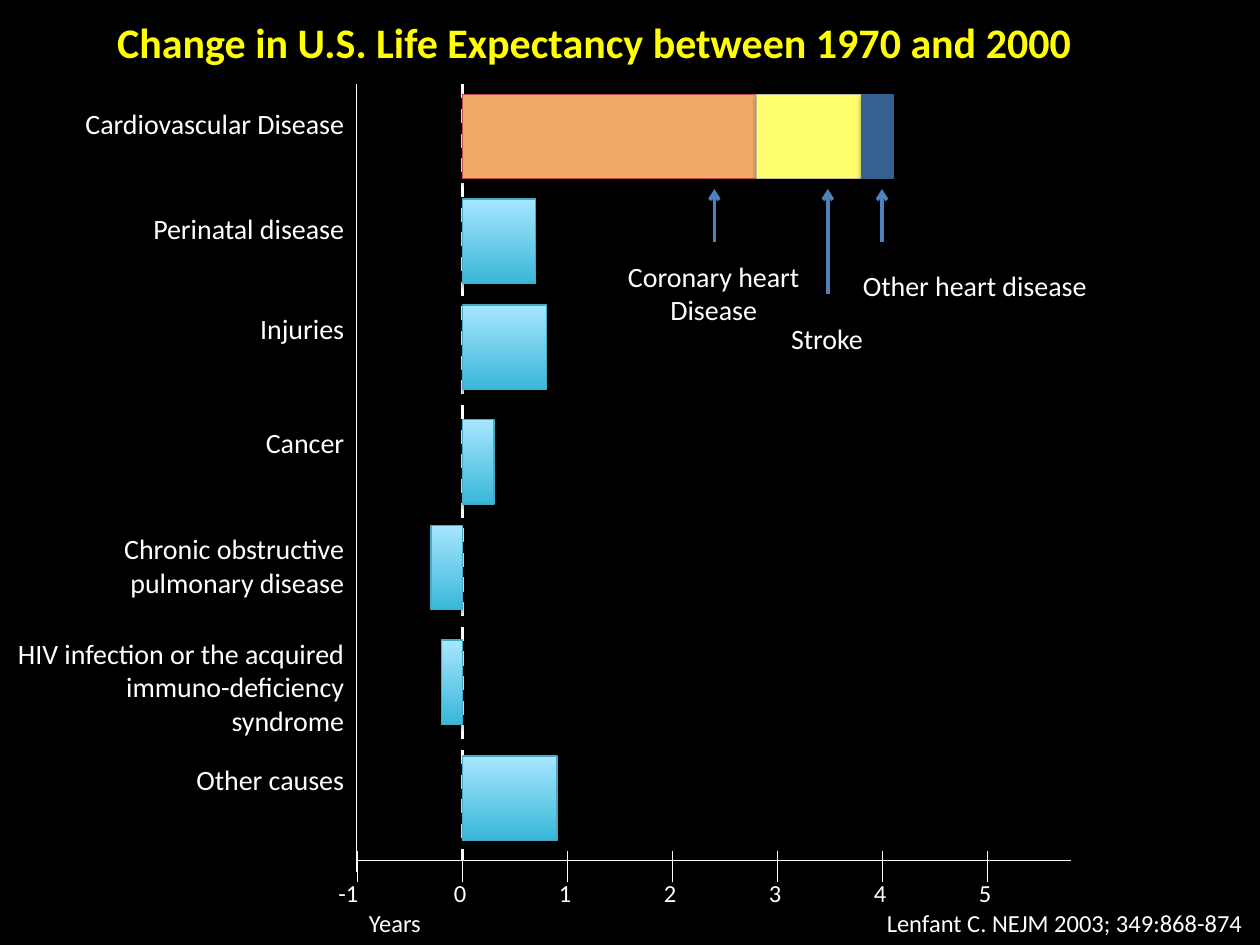
from lxml.etree import SubElement
from pptx import Presentation
from pptx.dml.color import RGBColor
from pptx.enum.dml import MSO_LINE
from pptx.enum.shapes import MSO_CONNECTOR, MSO_SHAPE
from pptx.enum.text import MSO_ANCHOR, MSO_AUTO_SIZE, PP_ALIGN as Align
from pptx.oxml.ns import qn
from pptx.util import Inches, Pt

COLORS = {
    "background": "000000", "text": "FFFFFF", "title": "FFFF00", "arrow": "4F81BD",
    "bar_bottom": "39B7D8", "bar_top": "A7E6FF", "bar_line": "46AAC5",
    "coronary": "F1A967", "coronary_line": "BF4C48",
    "stroke": "FFFF6E", "stroke_line": "C4BD97", "other_heart": "376092",
}
TITLE = "Change in U.S. Life Expectancy between 1970 and 2000"
SOURCE = "Lenfant C. NEJM 2003; 349:868-874"

# cause, bar top, label top, label width, label height,
# segments of (years, fill, line); a fill of None is the gradient
CAUSES = [
    ("Cardiovascular Disease", 0.75, 0.8, 2.67, 0.37,
     [(2.8, "coronary", "coronary_line"), (1, "stroke", "stroke_line"),
      (0.3, "other_heart", "other_heart")]),
    ("Perinatal disease", 1.58, 1.63, 2.75, 0.37, [(0.7, None, "bar_line")]),
    ("Injuries", 2.42, 2.42, 2.67, 0.37, [(0.8, None, "bar_line")]),
    ("Cancer", 3.33, 3.33, 2.75, 0.37, [(0.3, None, "bar_line")]),
    ("Chronic obstructive pulmonary disease", 4.17, 4.17, 2.75, 0.64,
     [(-0.3, None, "bar_line")]),
    ("HIV infection or the acquired immuno-deficiency syndrome", 5.08, 5, 2.83, 0.91,
     [(-0.2, None, "bar_line")]),
    ("Other causes", 6, 6, 2.67, 0.37, [(0.9, None, "bar_line")]),
]
# text, label box, alignment, arrow x, arrow start y
CALLOUTS = [
    ("Coronary heart\nDisease", (4.53, 2.01, 2.27, 0.64), Align.CENTER, 5.67, 1.92),
    ("Stroke", (6.18, 2.5, 0.95, 0.37), Align.LEFT, 6.57, 2.33),
    ("Other heart disease", (6.75, 2.08, 2.27, 0.37), Align.LEFT, 7, 1.92),
]
TICKS = range(-1, 6)
ZERO_X, YEAR_WIDTH = 3.67, 5 / 6
BAR_HEIGHT = 0.67
AXIS_LEFT, AXIS_RIGHT, AXIS_TOP, AXIS_Y = 2.83, 8.5, 0.67, 6.83
ARROW_TIP = 1.5


def color(name):
    return RGBColor.from_string(COLORS[name])


def year_x(years):
    return ZERO_X + years * YEAR_WIDTH


def set_effects(shape, shadow=None):
    """Replace the theme shadow; shadow is (opacity percent, distance in points)."""
    effects = SubElement(shape._element.spPr, qn("a:effectLst"))
    if shadow:
        opacity, distance = shadow
        outer = SubElement(effects, qn("a:outerShdw"), blurRad=str(Pt(3.1)),
                           dist=str(Pt(distance)), dir="5400000", rotWithShape="0")
        black = SubElement(outer, qn("a:srgbClr"), val=COLORS["background"])
        SubElement(black, qn("a:alpha"), val=str(opacity * 1000))


def write_text(shape, text, size=16, tint="text", bold=False, align=Align.LEFT, wrap=True):
    frame = shape.text_frame
    frame.word_wrap = wrap
    frame.vertical_anchor = MSO_ANCHOR.TOP
    frame.auto_size = MSO_AUTO_SIZE.SHAPE_TO_FIT_TEXT
    frame.text = text
    for para in frame.paragraphs:
        para.alignment = align
        for span in para.runs:
            span.font.name = "Calibri"
            span.font.size = Pt(size)
            span.font.bold = bold
            span.font.color.rgb = color(tint)


def add_label(page, text, place, **style):
    box = page.shapes.add_textbox(*map(Inches, place))
    write_text(box, text, **style)


def add_line(page, start, end, tint="text", width=0.75, dashed=False, arrow=False, shadow=None):
    line = page.shapes.add_connector(MSO_CONNECTOR.STRAIGHT, *map(Inches, start + end))
    line.line.color.rgb = color(tint)
    line.line.width = Pt(width)
    if dashed:
        line.line.dash_style = MSO_LINE.DASH
    if arrow:
        SubElement(line.line._get_or_add_ln(), qn("a:tailEnd"), type="arrow")
    set_effects(line, shadow)


def add_bar(page, start, end, top, fill, outline):
    left, right = sorted((year_x(start), year_x(end)))
    bar = page.shapes.add_shape(MSO_SHAPE.RECTANGLE, Inches(left), Inches(top),
                                Inches(right - left), Inches(BAR_HEIGHT))
    if fill:
        bar.fill.solid()
        bar.fill.fore_color.rgb = color(fill)
    else:
        bar.fill.gradient()
        bar.fill.gradient_angle = 90
        for stop, tint in zip(bar.fill.gradient_stops, ("bar_bottom", "bar_top")):
            stop.color.rgb = color(tint)
    bar.line.color.rgb = color(outline)
    bar.line.width = Pt(0.75)
    set_effects(bar, shadow=(35, 1.8))


def add_axes(page):
    add_line(page, (ZERO_X, AXIS_TOP), (ZERO_X, AXIS_Y), width=2, dashed=True, shadow=(38, 1.6))
    add_line(page, (AXIS_RIGHT, AXIS_Y), (AXIS_LEFT, AXIS_Y))
    add_line(page, (AXIS_LEFT, 6.92), (AXIS_LEFT, AXIS_TOP))
    for tick in TICKS:
        x = year_x(tick)
        width = 0.5 if tick < 0 else 0.33
        add_line(page, (x, 6.75), (x, 7))
        add_label(page, str(tick), (x - width / 2, 6.92, width, 0.34), size=14)
    add_label(page, "Years", (AXIS_LEFT, 7.16, 4.17, 0.34), size=14)


def add_causes(page):
    for cause, bar_top, label_top, width, height, segments in CAUSES:
        start = 0
        for years, fill, outline in segments:
            add_bar(page, start, start + years, bar_top, fill, outline)
            start += years
        add_label(page, cause, (AXIS_LEFT - width, label_top, width, height), align=Align.RIGHT)


def add_callouts(page):
    for text, place, align, x, start_y in CALLOUTS:
        add_label(page, text, place, align=align)
        add_line(page, (x, start_y), (x, ARROW_TIP), tint="arrow", width=2,
                 arrow=True, shadow=(38, 1.6))


def main():
    deck = Presentation()
    deck.slide_width, deck.slide_height = Inches(10), Inches(7.5)
    page = deck.slides.add_slide(deck.slide_layouts[5])
    page.background.fill.solid()
    page.background.fill.fore_color.rgb = color("background")

    title = page.shapes.title
    title.left, title.top, title.width, title.height = map(Inches, (0.83, 0.08, 8.33, 0.51))
    write_text(title, TITLE, size=24, tint="title", bold=True)

    add_axes(page)
    add_causes(page)
    add_callouts(page)
    add_label(page, SOURCE, (6.91, 7.16, 3.05, 0.34), size=14, align=Align.RIGHT, wrap=False)
    deck.save("out.pptx")


if __name__ == "__main__":
    main()
